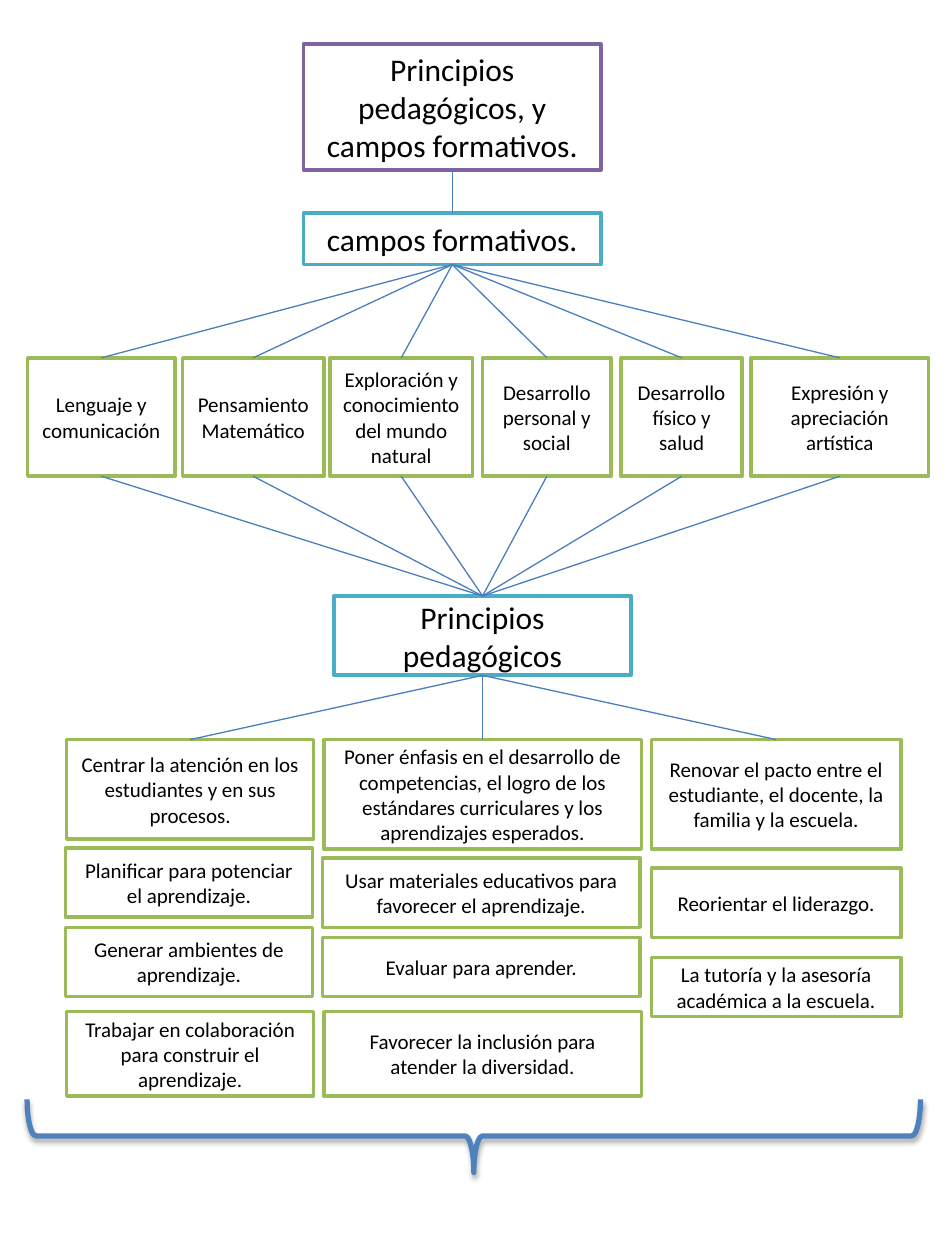
from typing import NamedTuple

from lxml import etree
from pptx import Presentation
from pptx.dml.color import RGBColor
from pptx.enum.shapes import MSO_CONNECTOR, MSO_SHAPE
from pptx.enum.text import MSO_ANCHOR, PP_ALIGN
from pptx.oxml.ns import qn
from pptx.shapes.autoshape import Shape
from pptx.slide import Slide
from pptx.util import Inches, Pt

RECTANGLE = MSO_SHAPE.RECTANGLE
RIGHT_BRACE = MSO_SHAPE.RIGHT_BRACE
STRAIGHT = MSO_CONNECTOR.STRAIGHT
CENTER = PP_ALIGN.CENTER
MIDDLE = MSO_ANCHOR.MIDDLE

WHITE = RGBColor(0xFF, 0xFF, 0xFF)
BLACK = RGBColor(0x00, 0x00, 0x00)
PURPLE = RGBColor(0x80, 0x64, 0xA2)
TEAL = RGBColor(0x4B, 0xAC, 0xC6)
GREEN = RGBColor(0x9B, 0xBB, 0x59)
CONNECTOR_BLUE = RGBColor(0x4B, 0x7E, 0xBC)
BRACE_BLUE = RGBColor(0x4F, 0x81, 0xBD)

FONT = "Calibri"
HEADING_SIZE = 18
TOP_SITE, BOTTOM_SITE = 0, 2
FIELD_TOP, FIELD_HEIGHT = 2.84, 0.94


class Box(NamedTuple):
    text: str
    left: float
    top: float
    width: float
    height: float


TITLE = Box("Principios pedagógicos, y campos formativos.", 2.41, 0.35, 2.36, 1)
FIELDS_HEADING = Box("campos formativos.", 2.41, 1.69, 2.36, 0.41)
PRINCIPLES_HEADING = Box("Principios pedagógicos", 2.65, 4.73, 2.36, 0.63)

FIELDS = [
    Box(text, left, FIELD_TOP, width, FIELD_HEIGHT)
    for text, left, width in (
        ("Lenguaje y comunicación", 0.22, 1.17),
        ("Pensamiento Matemático", 1.45, 1.12),
        ("Exploración y conocimiento del mundo natural", 2.62, 1.13),
        ("Desarrollo personal y social", 3.83, 1.02),
        ("Desarrollo físico y salud", 4.93, 0.96),
        ("Expresión y apreciación artística", 5.96, 1.41),
    )
]

PRINCIPLE_COLUMNS = [
    [
        Box("Centrar la atención en los estudiantes y en sus procesos.", 0.53, 5.87, 1.96, 0.79),
        Box("Planificar para potenciar el aprendizaje.", 0.52, 6.73, 1.96, 0.55),
        Box("Generar ambientes de aprendizaje.", 0.52, 7.36, 1.96, 0.55),
        Box("Trabajar en colaboración para construir el aprendizaje.", 0.53, 8.03, 1.96, 0.67),
    ],
    [
        Box("Poner énfasis en el desarrollo de competencias, el logro de los estándares "
            "curriculares y los aprendizajes esperados.", 2.57, 5.87, 2.52, 0.87),
        Box("Usar materiales educativos para favorecer el aprendizaje.", 2.56, 6.81, 2.52, 0.55),
        Box("Evaluar para aprender.", 2.56, 7.44, 2.52, 0.47),
        Box("Favorecer la inclusión para atender la diversidad.", 2.57, 8.03, 2.52, 0.67),
    ],
    [
        Box("Renovar el pacto entre el estudiante, el docente, la familia y la escuela.",
            5.17, 5.87, 1.98, 0.87),
        Box("Reorientar el liderazgo.", 5.17, 6.89, 1.98, 0.55),
        Box("La tutoría y la asesoría académica a la escuela.", 5.17, 7.6, 1.98, 0.47),
    ],
]


def write_text(shape: Shape, text: str, *, size: float = 12, color: RGBColor = BLACK) -> None:
    frame = shape.text_frame
    frame.word_wrap = True
    frame.vertical_anchor = MIDDLE
    paragraph = frame.paragraphs[0]
    paragraph.alignment = CENTER
    run = paragraph.add_run()
    run.text = text
    run.font.name = FONT
    run.font.size = Pt(size)
    run.font.color.rgb = color


def format_box(shape: Shape, box: Box, outline: RGBColor, size: float) -> None:
    shape.fill.solid()
    shape.fill.fore_color.rgb = WHITE
    shape.line.color.rgb = outline
    shape.line.width = Pt(2)
    shape.shadow.inherit = False
    write_text(shape, box.text, size=size)


def add_box(slide: Slide, box: Box, outline: RGBColor = GREEN, size: float = 12) -> Shape:
    shape = slide.shapes.add_shape(
        RECTANGLE, Inches(box.left), Inches(box.top), Inches(box.width), Inches(box.height)
    )
    format_box(shape, box, outline, size)
    return shape


def place_title(slide: Slide, box: Box) -> Shape:
    title = slide.shapes.title
    title.left, title.top = Inches(box.left), Inches(box.top)
    title.width, title.height = Inches(box.width), Inches(box.height)
    format_box(title, box, PURPLE, HEADING_SIZE)
    return title


def connect(slide: Slide, upper: Shape, lower: Shape) -> None:
    """Join the bottom centre of one box to the top centre of another."""
    connector = slide.shapes.add_connector(STRAIGHT, 0, 0, 0, 0)
    connector.begin_connect(upper, BOTTOM_SITE)
    connector.end_connect(lower, TOP_SITE)
    connector.line.color.rgb = CONNECTOR_BLUE
    connector.line.width = Pt(0.75)
    etree.SubElement(connector.element.spPr, qn("a:effectLst"))


def add_brace(slide: Slide) -> None:
    brace = slide.shapes.add_shape(
        RIGHT_BRACE, Inches(3.47), Inches(5.47), Inches(0.58), Inches(7.09)
    )
    brace.rotation = 90
    brace.adjustments[0] = 0.12
    brace.adjustments[1] = 0.5
    brace.fill.background()
    brace.line.color.rgb = BRACE_BLUE
    brace.line.width = Pt(3)
    brace.shadow.inherit = False
    effects = brace.element.spPr.find(qn("a:effectLst"))
    shadow = etree.SubElement(
        effects, qn("a:outerShdw"), blurRad=str(Pt(3.1)), dist=str(Pt(1.8)),
        dir="5400000", rotWithShape="0",
    )
    color = etree.SubElement(shadow, qn("a:srgbClr"), val=str(BLACK))
    etree.SubElement(color, qn("a:alpha"), val="35000")


def main() -> None:
    presentation = Presentation()
    presentation.slide_width = Inches(7.5)
    presentation.slide_height = Inches(10)
    title_only = presentation.slide_layouts.get_by_name("Title Only")
    slide = presentation.slides.add_slide(title_only)

    title = place_title(slide, TITLE)
    fields_heading = add_box(slide, FIELDS_HEADING, TEAL, HEADING_SIZE)
    principles_heading = add_box(slide, PRINCIPLES_HEADING, TEAL, HEADING_SIZE)
    connect(slide, title, fields_heading)

    for box in FIELDS:
        field = add_box(slide, box)
        connect(slide, fields_heading, field)
        connect(slide, field, principles_heading)

    for column in PRINCIPLE_COLUMNS:
        principles = [add_box(slide, box) for box in column]
        connect(slide, principles_heading, principles[0])

    add_brace(slide)
    presentation.save("out.pptx")


if __name__ == "__main__":
    main()
